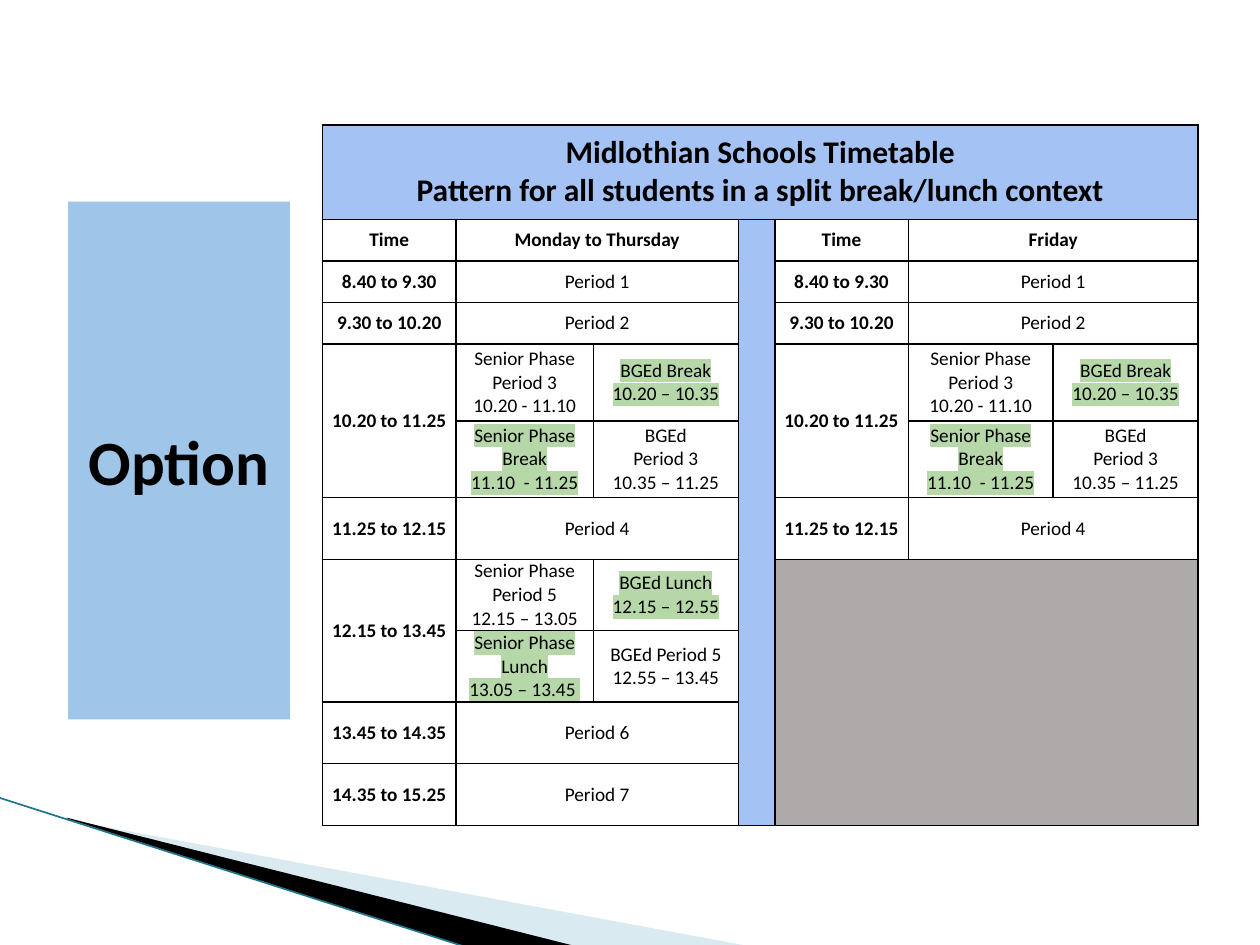
from pptx import Presentation
from pptx.dml.color import RGBColor
from pptx.enum.shapes import MSO_CONNECTOR
from pptx.enum.text import MSO_ANCHOR, MSO_AUTO_SIZE, PP_ALIGN
from pptx.oxml import parse_xml
from pptx.oxml.ns import nsdecls, qn
from pptx.util import Inches, Pt
from lxml.etree import SubElement

HUES = {"black": "000000", "white": "FFFFFF", "head": "A4C2F4", "panel": "9FC5E8",
        "gray": "AEAAAA", "green": "B6D7A8", "pale": "A0CBDC", "line": "1F7489"}
LABEL = "Option"
HEAD = "Midlothian Schools Timetable\nPattern for all students in a split break/lunch context"
DAYS = [("Monday to Thursday", 0, 7), ("Friday", 4, 4)]
SLOTS = [
    ("8.40 to 9.30", "Period 1"),
    ("9.30 to 10.20", "Period 2"),
    ("10.20 to 11.25", [
        ("Senior Phase\nPeriod 3\n10.20 - 11.10", "BGEd Break\n10.20 – 10.35"),
        ("Senior Phase Break\n11.10  - 11.25", "BGEd\nPeriod 3\n10.35 – 11.25")]),
    ("11.25 to 12.15", "Period 4"),
    ("12.15 to 13.45", [
        ("Senior Phase\nPeriod 5\n12.15 – 13.05", "BGEd Lunch\n12.15 – 12.55"),
        ("Senior Phase Lunch\n13.05 – 13.45 ", "BGEd Period 5\n12.55 – 13.45")]),
    ("13.45 to 14.35", "Period 6"),
    ("14.35 to 15.25", "Period 7"),
]
COLS = [1.06, 1.09, 1.15, 0.29, 1.06, 1.15, 1.15]
ROWS = [0.74, 0.33, 0.33, 0.33, 0.61, 0.61, 0.49, 0.55, 0.55, 0.49, 0.49]
WEDGES = [
    ("pale", 40, [(0.55, 6.51), (5.95, 7.51), (4.56, 7.51), (0.55, 6.5)]),
    ("black", 100, [(0.53, 6.49), (4.57, 7.51), (3.72, 7.52), (0.54, 6.5)]),
]


def tint(fill, hue):
    """Give a fill one solid colour."""
    fill.solid()
    fill.fore_color.rgb = RGBColor.from_string(HUES[hue])


def style(item, form):
    """Set attributes from a dict."""
    for name, value in form.items():
        setattr(item, name, value)


def write(frame, text, size, bold, mark=False):
    """Write centred lines, highlighted if marked."""
    frame.text = text
    for para in frame.paragraphs:
        para.alignment = PP_ALIGN.CENTER
        for run in para.runs:
            style(run.font, {"name": "Calibri", "size": Pt(size), "bold": bold})
            tint(run.font.fill, "black")
            if mark:
                glow = parse_xml(f'<a:highlight {nsdecls("a")}><a:srgbClr val="{HUES["green"]}"/></a:highlight>')
                run.font.fill._xPr.find(qn("a:solidFill")).addnext(glow)


def frame_cell(cell):
    """Format a blank cell with thin black borders."""
    style(cell, {"margin_left": Inches(0.07), "margin_right": Inches(0.07), "margin_top": 0,
                 "margin_bottom": 0, "vertical_anchor": MSO_ANCHOR.MIDDLE})
    tint(cell.fill, "white")
    props = cell._tc.get_or_add_tcPr()
    for spot, side in enumerate("LRTB"):
        props.insert(spot, parse_xml(
            f'<a:ln{side} {nsdecls("a")} w="12700"><a:solidFill>'
            f'<a:srgbClr val="{HUES["black"]}"/></a:solidFill></a:ln{side}>'))


def put(grid, row, col, text="", size=11, bold=False, span=(1, 1)):
    """Fill a cell, merged over its span, and return it."""
    cell = grid.cell(row, col)
    if span != (1, 1):
        cell.merge(grid.cell(row + span[0] - 1, col + span[1] - 1))
    if text:
        write(cell.text_frame, text, size, bold, "Break" in text or "Lunch" in text)
    return cell


def add_day(grid, name, col, count):
    """Lay out the slots of one day and return the next free row."""
    put(grid, 1, col, "Time", bold=True)
    put(grid, 1, col + 1, name, bold=True, span=(1, 2))
    row = 2
    for time, plan in SLOTS[:count]:
        split = isinstance(plan, list)
        deep = len(plan) if split else 1
        put(grid, row, col, time, bold=True, span=(deep, 1))
        if split:
            for down, pair in enumerate(plan):
                for side, text in enumerate(pair, 1):
                    put(grid, row + down, col + side, text)
        else:
            put(grid, row, col + 1, plan, span=(1, 2))
        row += deep
    return row


def add_grid(slide):
    """Build the timetable."""
    grid = slide.shapes.add_table(len(ROWS), len(COLS), Inches(2.56), Inches(0.99),
                                  Inches(sum(COLS)), Inches(sum(ROWS))).table
    style(grid, {"first_row": False, "horz_banding": False})
    for col, width in zip(grid.columns, COLS):
        col.width = Inches(width)
    for row, high in zip(grid.rows, ROWS):
        row.height = Inches(high)
    for cell in grid.iter_cells():
        frame_cell(cell)
    head = put(grid, 0, 0, HEAD, 18, True, (1, len(COLS)))
    style(head, {"margin_top": Inches(0.07), "margin_bottom": Inches(0.07),
                 "vertical_anchor": MSO_ANCHOR.TOP})
    tint(head.fill, "head")
    tint(put(grid, 1, 3, span=(len(ROWS) - 1, 1)).fill, "head")
    for day in DAYS:
        end = add_day(grid, *day)
    tint(put(grid, end, 4, span=(len(ROWS) - end, 3)).fill, "gray")


def add_decor(slide):
    """Draw the corner wedges and their edge line."""
    for hue, alpha, spots in WEDGES:
        first, *rest = [(Inches(x), Inches(y)) for x, y in spots]
        pen = slide.shapes.build_freeform(*first)
        pen.add_line_segments(rest)
        wedge = pen.convert_to_shape()
        wedge.shadow.inherit = False
        wedge.line.fill.background()
        tint(wedge.fill, hue)
        if alpha < 100:
            clr = wedge._element.spPr.find(qn("a:solidFill"))[0]
            SubElement(clr, qn("a:alpha"), val=str(alpha * 1000))
    edge = slide.shapes.add_connector(MSO_CONNECTOR.STRAIGHT, Inches(-0.01), Inches(6.33),
                                      Inches(3.71), Inches(7.52))
    tint(edge.line.fill, "line")
    edge.line.width = Pt(0.95)
    SubElement(edge._element.spPr, qn("a:effectLst"))


def add_label(slide):
    """Format the title as the side panel."""
    title = slide.shapes.title
    style(title, {"left": Inches(0.54), "top": Inches(1.6),
                  "width": Inches(1.76), "height": Inches(4.11)})
    tint(title.fill, "panel")
    frame = title.text_frame
    write(frame, LABEL, 36, True)
    style(frame, {"word_wrap": True, "auto_size": MSO_AUTO_SIZE.NONE,
                  "vertical_anchor": MSO_ANCHOR.MIDDLE})
    style(frame, {f"margin_{side}": Inches(0.1) for side in ("left", "right", "top", "bottom")})


def main():
    """Build and save the slide."""
    deck = Presentation()
    style(deck, {"slide_width": Inches(10), "slide_height": Inches(7.5)})
    slide = deck.slides.add_slide(deck.slide_layouts[5])
    add_decor(slide)
    add_grid(slide)
    add_label(slide)
    deck.save("out.pptx")


if __name__ == "__main__":
    main()
